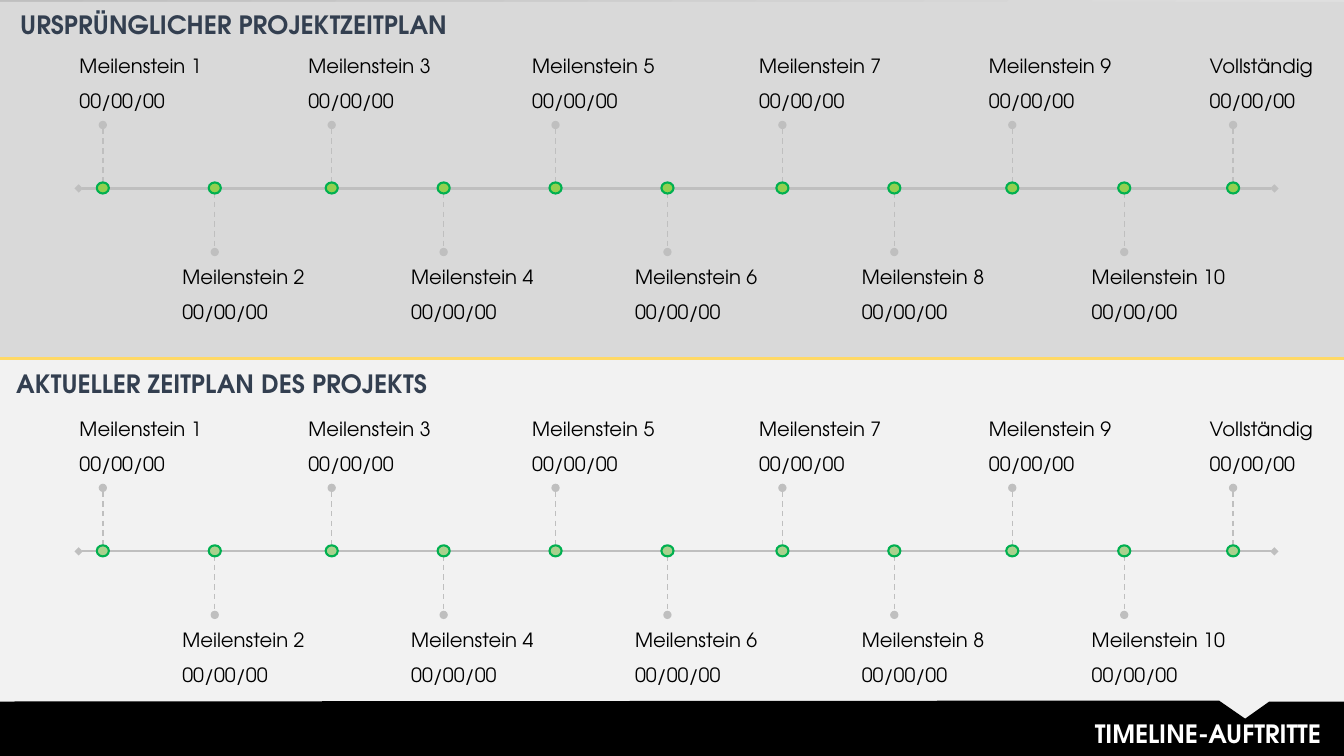
from dataclasses import dataclass

from lxml.etree import SubElement
from pptx import Presentation
from pptx.dml.color import RGBColor
from pptx.enum.dml import MSO_LINE
from pptx.enum.shapes import MSO_CONNECTOR, MSO_SHAPE
from pptx.enum.text import MSO_AUTO_SIZE, PP_ALIGN
from pptx.oxml.ns import qn
from pptx.util import Emu, Pt

PX = 9144  # 100 px to the inch
WIDTH, HEIGHT = 1333, 750
FONT = "TeX Gyre Adventor"
GREY, GREEN, GOLD = "BFBFBF", "00B050", "FFD966"
LIGHT, BLACK, WHITE, SLATE = "F2F2F2", "000000", "FFFFFF", "333F50"

STEM_LENGTH = 63
DOT_WIDTH, DOT_HEIGHT = 12, 11
LABEL_WIDTH, LABEL_HEIGHT = 190, 64


@dataclass(frozen=True)
class Milestone:
    name: str
    x: int
    date: str = "00/00/00"


@dataclass(frozen=True)
class Timeline:
    title: str
    title_x: int
    title_y: int
    axis_y: int
    dot_color: str


STEM_XS = (102, 213, 329, 440, 551, 662, 776, 887, 1004, 1115)
MILESTONES = [Milestone(f"Meilenstein {number}", x) for number, x in enumerate(STEM_XS, 1)]
MILESTONES.append(Milestone("Vollständig", 1223))

TIMELINES = (
    Timeline("URSPRÜNGLICHER PROJEKTZEITPLAN", 8, 3, 187, "92D050"),
    Timeline("AKTUELLER ZEITPLAN DES PROJEKTS", 4, 360, 547, "A9D18E"),
)


def px(length: int) -> Emu:
    return Emu(length * PX)


def color(value: str) -> RGBColor:
    return RGBColor.from_string(value)


def fill_plain(shape, fill: str) -> None:
    shape.shadow.inherit = False
    shape.fill.solid()
    shape.fill.fore_color.rgb = color(fill)
    shape.line.fill.background()


def add_shape(shapes, kind, x: int, y: int, w: int, h: int, fill: str):
    shape = shapes.add_shape(kind, px(x), px(y), px(w), px(h))
    fill_plain(shape, fill)
    return shape


def add_line(shapes, x1: int, y1: int, x2: int, y2: int, stroke: str, weight: float,
             ends: str = "", dashed: bool = False) -> None:
    connector = shapes.add_connector(MSO_CONNECTOR.STRAIGHT, px(x1), px(y1), px(x2), px(y2))
    connector.line.color.rgb = color(stroke)
    connector.line.width = Pt(weight)
    if dashed:
        connector.line.dash_style = MSO_LINE.DASH
    properties = connector._element.spPr
    if ends:
        outline = properties.find(qn("a:ln"))
        for tag in ("a:headEnd", "a:tailEnd"):
            SubElement(outline, qn(tag), type=ends)
    SubElement(properties, qn("a:effectLst"))


def add_text(shapes, x: int, y: int, w: int, h: int, lines: tuple[str, ...], size: int,
             ink: str, bold: bool = False, after: int = 0):
    frame = shapes.add_textbox(px(x), px(y), px(w), px(h)).text_frame
    frame.word_wrap = True
    for index, line in enumerate(lines):
        paragraph = frame.add_paragraph() if index else frame.paragraphs[0]
        paragraph.space_after = Pt(after)
        run = paragraph.add_run()
        run.text = line
        run.font.name = FONT
        run.font.size = Pt(size)
        run.font.bold = bold
        run.font.color.rgb = color(ink)
    return frame


def draw_milestone(shapes, milestone: Milestone, above: bool, timeline: Timeline) -> None:
    x, axis = milestone.x, timeline.axis_y
    # Stem
    top = axis - STEM_LENGTH if above else axis
    add_line(shapes, x, top, x, top + STEM_LENGTH, GREY, 1, "oval", dashed=True)
    # Dot on the axis
    dot = add_shape(shapes, MSO_SHAPE.OVAL, x - DOT_WIDTH // 2, axis - 6,
                    DOT_WIDTH, DOT_HEIGHT, timeline.dot_color)
    dot.line.color.rgb = color(GREEN)
    dot.line.width = Pt(1.5)
    # Name and date
    label_x, label_y = (x - 33, axis - 138) if above else (x - 42, axis + 71)
    add_text(shapes, label_x, label_y, LABEL_WIDTH, LABEL_HEIGHT,
             (milestone.name, milestone.date), 14, BLACK, after=8)


def draw_timeline(slide, timeline: Timeline) -> None:
    group = slide.shapes.add_group_shape().shapes
    add_line(group, 78, timeline.axis_y, 1264, timeline.axis_y, GREY, 1.5, "diamond")
    for index, milestone in enumerate(MILESTONES):
        draw_milestone(group, milestone, index % 2 == 0, timeline)

    title = add_text(slide.shapes, timeline.title_x, timeline.title_y, 528, 41,
                     (timeline.title,), 18, SLATE, bold=True)
    title.margin_left = title.margin_right = px(12)
    title.margin_top = title.margin_bottom = px(6)
    title.auto_size = MSO_AUTO_SIZE.SHAPE_TO_FIT_TEXT
    title.paragraphs[0].line_spacing = Pt(21.5)


def draw_background(slide) -> None:
    fill = slide.background.fill
    fill.gradient()
    fill.gradient_angle = 135
    for stop, position, shade in zip(fill.gradient_stops, (0, 1), (LIGHT, GREY)):
        stop.position = position
        stop.color.rgb = color(shade)
    add_shape(slide.shapes, MSO_SHAPE.RECTANGLE, -2, 2, 1335, 354, "D9D9D9")
    add_shape(slide.shapes, MSO_SHAPE.RECTANGLE, -2, 356, 1335, 396, LIGHT)


def draw_footer(slide) -> None:
    # Black band with a notch
    builder = slide.shapes.build_freeform(0, 696, scale=PX)
    builder.add_line_segments(
        [(1209, 695), (1235, 713), (1259, 696), (WIDTH, 696), (WIDTH, 752), (0, 752)])
    fill_plain(builder.convert_to_shape(), BLACK)
    caption = add_text(slide.shapes, 414, 708, 906, 40, ("TIMELINE-AUFTRITTE",),
                       18, WHITE, bold=True)
    caption.auto_size = MSO_AUTO_SIZE.SHAPE_TO_FIT_TEXT
    caption.paragraphs[0].alignment = PP_ALIGN.RIGHT


def main() -> None:
    presentation = Presentation()
    presentation.slide_width, presentation.slide_height = px(WIDTH), px(HEIGHT)
    slide = presentation.slides.add_slide(presentation.slide_layouts[6])
    draw_background(slide)
    draw_footer(slide)
    for timeline in TIMELINES:
        draw_timeline(slide, timeline)
    # Divider between the two schedules
    add_line(slide.shapes, 0, 356, WIDTH, 356, GOLD, 2.25)
    presentation.save("out.pptx")


if __name__ == "__main__":
    main()
